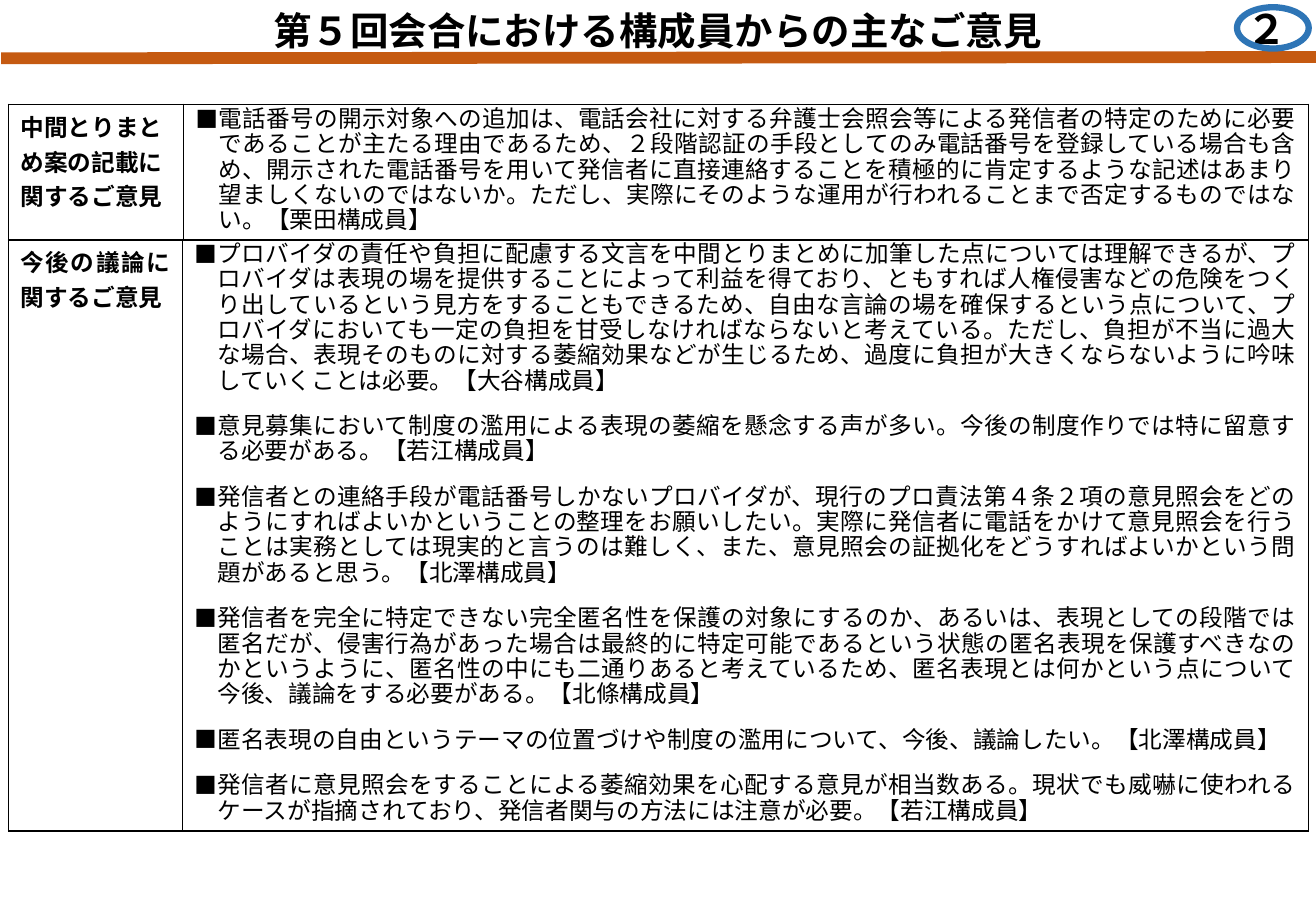
from pptx import Presentation
from pptx.dml.color import RGBColor
from pptx.enum.shapes import MSO_CONNECTOR as Link, MSO_SHAPE as Kind
from pptx.enum.text import MSO_ANCHOR as Anchor, PP_ALIGN as Align
from pptx.oxml.ns import qn
from pptx.util import Inches, Pt
from lxml.etree import SubElement as Sub

GOTHIC = "Noto Sans CJK JP"
BLACK = "000000"

VIEWS = [
    "電話番号の開示対象への追加は、電話会社に対する弁護士会照会等による発信者の特定のために必要であることが主たる理由であるため、２段階認証の手段としてのみ電話番号を登録している場合も含め、開示された電話番号を用いて発信者に直接連絡することを積極的に肯定するような記述はあまり望ましくないのではないか。ただし、実際にそのような運用が行われることまで否定するものではない。【栗田構成員】",
]
FUTURE = [
    "プロバイダの責任や負担に配慮する文言を中間とりまとめに加筆した点については理解できるが、プロバイダは表現の場を提供することによって利益を得ており、ともすれば人権侵害などの危険をつくり出しているという見方をすることもできるため、自由な言論の場を確保するという点について、プロバイダにおいても一定の負担を甘受しなければならないと考えている。ただし、負担が不当に過大な場合、表現そのものに対する萎縮効果などが生じるため、過度に負担が大きくならないように吟味していくことは必要。【大谷構成員】",
    "意見募集において制度の濫用による表現の萎縮を懸念する声が多い。今後の制度作りでは特に留意する必要がある。【若江構成員】",
    "発信者との連絡手段が電話番号しかないプロバイダが、現行のプロ責法第４条２項の意見照会をどのようにすればよいかということの整理をお願いしたい。実際に発信者に電話をかけて意見照会を行うことは実務としては現実的と言うのは難しく、また、意見照会の証拠化をどうすればよいかという問題があると思う。【北澤構成員】",
    "発信者を完全に特定できない完全匿名性を保護の対象にするのか、あるいは、表現としての段階では匿名だが、侵害行為があった場合は最終的に特定可能であるという状態の匿名表現を保護すべきなのかというように、匿名性の中にも二通りあると考えているため、匿名表現とは何かという点について今後、議論をする必要がある。【北條構成員】",
    "匿名表現の自由というテーマの位置づけや制度の濫用について、今後、議論したい。【北澤構成員】",
    "発信者に意見照会をすることによる萎縮効果を心配する意見が相当数ある。現状でも威嚇に使われるケースが指摘されており、発信者関与の方法には注意が必要。【若江構成員】",
]


def tint(code):
    """Turn a hex string into a colour."""
    return RGBColor.from_string(code)


def write(frame, lines, size=14, face=GOTHIC, bold=False, align=Align.LEFT, bullet=None):
    """Fill a text frame with one paragraph per line."""
    frame.word_wrap = True
    for i, line in enumerate(lines):
        para = frame.paragraphs[0] if i == 0 else frame.add_paragraph()
        para.alignment = align
        if bullet:
            para.line_spacing = Pt(15)
            para.space_after = Pt(12)
            props = para._p.get_or_add_pPr()
            props.set("marL", str(Inches(0.19)))
            props.set("indent", str(Inches(-0.19)))
            Sub(props, qn("a:buFont"), typeface="Calibri")
            Sub(props, qn("a:buChar"), char=bullet)
        run = para.add_run()
        run.text = line
        font = run.font
        font.size, font.name, font.bold = Pt(size), face, bold
        font.color.rgb = tint(BLACK)
        Sub(run._r.get_or_add_rPr(), qn("a:ea"), typeface=GOTHIC)


def label(slide, box, text, **style):
    """Place a one-line text box, centred vertically."""
    frame = slide.shapes.add_textbox(*map(Inches, box)).text_frame
    frame.vertical_anchor = Anchor.MIDDLE
    write(frame, [text], bold=True, **style)


def header(slide, left, top, width):
    """Draw the title, the rule below it and the page number in its ring."""
    right = left + width
    label(slide, (right - 2.58, top + 0.03, 2.44, 0.4), "２",
          size=24, face="Calibri", align=Align.RIGHT)
    label(slide, (left, top + 0.01, width, 0.48), "第５回会合における構成員からの主なご意見",
          size=22.8, align=Align.CENTER)
    ends = (left + 0.01, top + 0.48, right + 0.01, top + 0.47)
    rule = slide.shapes.add_connector(Link.STRAIGHT, *map(Inches, ends))
    rule.line.color.rgb = tint("C55A11")
    rule.line.width = Pt(7)
    Sub(rule._element.spPr, qn("a:effectLst"))
    ring = slide.shapes.add_shape(
        Kind.OVAL, *map(Inches, (right - 0.65, top + 0.06, 0.59, 0.34)))
    ring.shadow.inherit = False
    ring.fill.background()
    ring.line.color.rgb = tint("2E75B6")
    ring.line.width = Pt(3.75)


def edge(cell):
    """Give a cell thin black borders and no fill."""
    props = cell._tc.get_or_add_tcPr()
    for side in ("lnL", "lnR", "lnT", "lnB"):
        line = Sub(props, qn(f"a:{side}"), w=str(Pt(1)))
        Sub(Sub(line, qn("a:solidFill")), qn("a:srgbClr"), val=BLACK)
    cell.fill.background()


def panel(slide, box, split, topic, views, align):
    """Build a one-row table: a topic beside its bulleted views."""
    left, top, width, height = box
    table = slide.shapes.add_table(1, 2, *map(Inches, box)).table
    table.first_row = table.horz_banding = False
    for col, size in zip(table.columns, (split, width - split)):
        col.width = Inches(size)
    for cell in table.iter_cells():
        edge(cell)
        cell.margin_left = cell.margin_right = Inches(0.1)
        cell.margin_top = cell.margin_bottom = Inches(0.04)
    head, body = table.iter_cells()
    write(head.text_frame, [topic], bold=True, align=align)
    write(body.text_frame, views, align=Align.JUSTIFY, bullet="■")


def main():
    """Build and save the slide."""
    deck = Presentation()
    deck.slide_width, deck.slide_height = Inches(10.83), Inches(7.5)
    slide = deck.slides.add_slide(deck.slide_layouts[6])
    header(slide, 0, 0, 10.83)
    panel(slide, (0.07, 0.86, 10.7, 0.93), 1.44,
          "中間とりまとめ案の記載に関するご意見", VIEWS, Align.LEFT)
    panel(slide, (0.07, 1.97, 10.7, 4.27), 1.43,
          "今後の議論に関するご意見", FUTURE, Align.JUSTIFY)
    deck.save("out.pptx")


if __name__ == "__main__":
    main()
